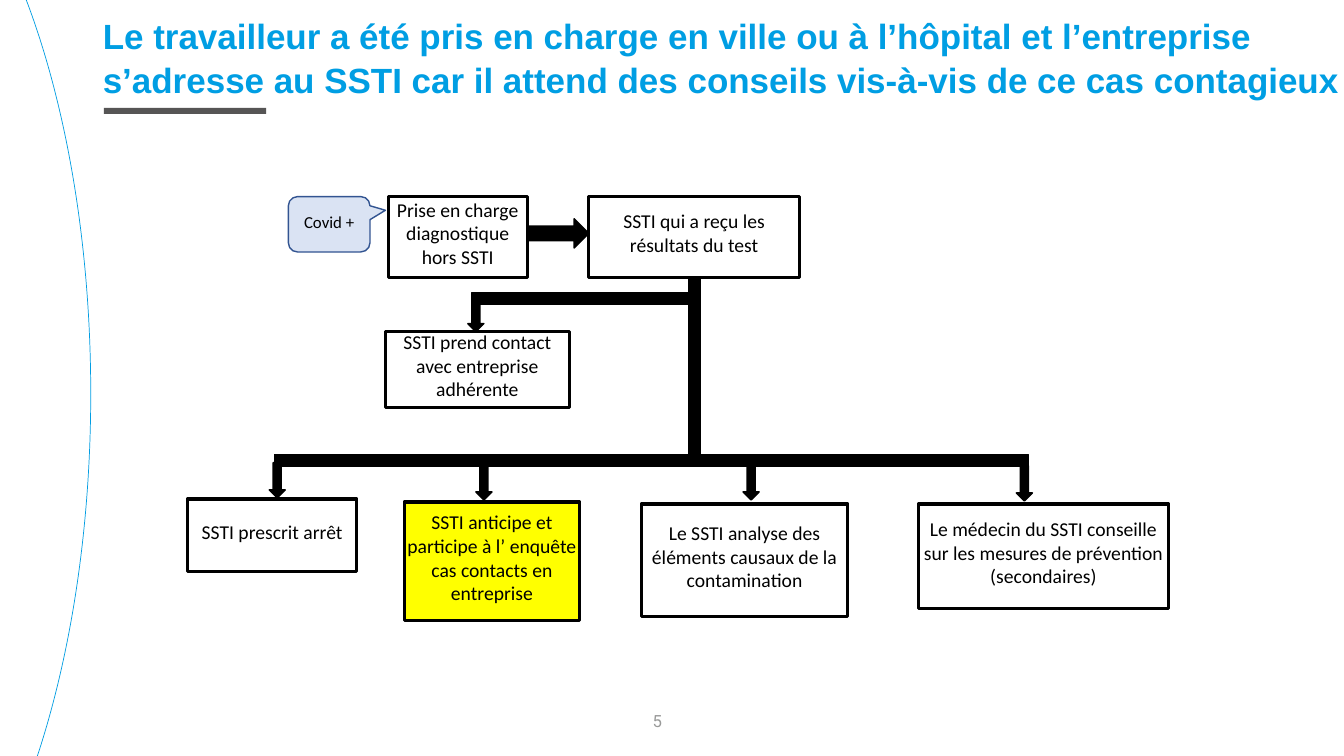
from pptx import Presentation
from pptx.dml.color import RGBColor
from pptx.enum.shapes import MSO_SHAPE as Preset
from pptx.enum.text import MSO_ANCHOR as Anchor, MSO_AUTO_SIZE as AutoSize, PP_ALIGN as Align
from pptx.util import Inches, Pt

BLACK = RGBColor(0x00, 0x00, 0x00)
WHITE = RGBColor(0xFF, 0xFF, 0xFF)
YELLOW = RGBColor(0xFF, 0xFF, 0x00)
TITLE_BLUE = RGBColor(0x00, 0x9E, 0xE3)
ARC_BLUE = RGBColor(0x01, 0x9D, 0xE2)
RULE_GREY = RGBColor(0x56, 0x55, 0x55)
NUMBER_GREY = RGBColor(0x99, 0x9A, 0x99)
CALLOUT_FILL = RGBColor(0xDA, 0xE3, 0xF3)
CALLOUT_LINE = RGBColor(0x32, 0x54, 0x91)

TITLE = ("Le travailleur a été pris en charge en ville ou à l’hôpital et l’entreprise "
         "s’adresse au SSTI car il attend des conseils vis-à-vis de ce cas contagieux")

STEPS = [
    ("Prise en charge diagnostique hors SSTI", (3.85, 1.95, 1.38, 0.8), WHITE),
    ("SSTI qui a reçu les résultats du test", (5.84, 1.95, 2.09, 0.8), WHITE),
    ("SSTI prend contact avec entreprise adhérente", (3.82, 3.29, 1.83, 0.75), WHITE),
    ("SSTI prescrit arrêt", (1.86, 4.95, 1.68, 0.72), WHITE),
    ("SSTI anticipe et participe à l’ enquête cas contacts en entreprise",
     (4.01, 4.98, 1.74, 1.18), YELLOW),
    ("Le SSTI analyse des éléments causaux de la contamination",
     (6.36, 5, 2.05, 1.12), WHITE),
    ("Le médecin du SSTI conseille sur les mesures de prévention (secondaires)",
     (9.11, 5, 2.48, 1.04), WHITE),
]

BARS = [(2.72, 4.51, 7.48, 0.12), (4.68, 2.9, 2.2, 0.12), (6.83, 2.77, 0.12, 1.77)]
DOWN_ARROWS = [(2.67, 4.59), (4.72, 4.61), (7.37, 4.61), (10.08, 4.62), (4.64, 2.94)]


def add_preset(slide, preset, place, fill=None, line=None, width=1):
    """Add a preset shape without shadow, filled and outlined as asked."""
    shape = slide.shapes.add_shape(preset, *map(Inches, place))
    shape.shadow.inherit = False
    if fill is None:
        shape.fill.background()
    else:
        shape.fill.solid()
        shape.fill.fore_color.rgb = fill
    if line is None:
        shape.line.fill.background()
    else:
        shape.line.color.rgb = line
        shape.line.width = Pt(width)
    return shape


def write(shape, text, size, font, color, align=Align.CENTER, anchor=Anchor.MIDDLE,
          insets=(0, 0, 0, 0.08)):
    """Write one wrapped paragraph in a shape and return the paragraph."""
    frame = shape.text_frame
    frame.word_wrap = True
    frame.auto_size = AutoSize.NONE
    frame.vertical_anchor = anchor
    (frame.margin_left, frame.margin_top,
     frame.margin_right, frame.margin_bottom) = map(Inches, insets)
    paragraph = frame.paragraphs[0]
    paragraph.text = text
    paragraph.alignment = align
    paragraph.font.size = Pt(size)
    paragraph.font.name = font
    paragraph.font.color.rgb = color
    return paragraph


def add_title(slide):
    """Place and format the title."""
    title = slide.shapes.title
    title.left, title.top, title.width, title.height = map(Inches, (0.92, 0.07, 12.41, 0.62))
    paragraph = write(title, TITLE, 25, "Arial", TITLE_BLUE, Align.LEFT, Anchor.TOP,
                      (0.1, 0.06, 0, 0))
    paragraph.font.bold = True
    paragraph.line_spacing = 1.04


def add_decoration(slide):
    """Add the rule under the title and the arc at the left edge."""
    add_preset(slide, Preset.RECTANGLE, (1.03, 1.07, 1.61, 0.06), RULE_GREY)
    arc = add_preset(slide, Preset.ARC, (-4.42, -2.1, 5.32, 12.01), line=ARC_BLUE, width=0.5)
    arc.adjustments[0] = 178.34
    arc.adjustments[1] = 35.857


def add_callout(slide):
    """Add the speech bubble beside the first step."""
    callout = add_preset(slide, Preset.ROUNDED_RECTANGULAR_CALLOUT, (2.86, 1.95, 0.81, 0.55),
                         CALLOUT_FILL, CALLOUT_LINE)
    for index, value in enumerate((0.689, -0.253, 0.167)):
        callout.adjustments[index] = value
    write(callout, "Covid +", 12, "Calibri", BLACK, insets=(0.05, 0.05, 0.05, 0.09))


def add_links(slide):
    """Add the bars and block arrows that join the steps."""
    for place in BARS:
        add_preset(slide, Preset.RECTANGLE, place, BLACK, BLACK)
    for left, top in DOWN_ARROWS:
        add_preset(slide, Preset.DOWN_ARROW, (left, top, 0.16, 0.35), BLACK, BLACK)
    add_preset(slide, Preset.RIGHT_ARROW, (5.23, 2.17, 0.61, 0.29), BLACK, BLACK)


def main():
    """Build the slide and save the deck."""
    deck = Presentation()
    deck.slide_width, deck.slide_height = Inches(13.33), Inches(7.5)
    slide = deck.slides.add_slide(deck.slide_layouts[5])
    add_decoration(slide)
    add_title(slide)
    number = slide.shapes.add_textbox(*map(Inches, (5.02, 6.95, 3, 0.4)))
    write(number, "5", 12, "Roboto", NUMBER_GREY, insets=(0.1, 0.05, 0.1, 0.05))
    for text, place, fill in STEPS:
        box = add_preset(slide, Preset.RECTANGLE, place, fill, BLACK, 2.25)
        write(box, text, 14, "Calibri", BLACK)
    add_callout(slide)
    add_links(slide)
    deck.save("out.pptx")


if __name__ == "__main__":
    main()
